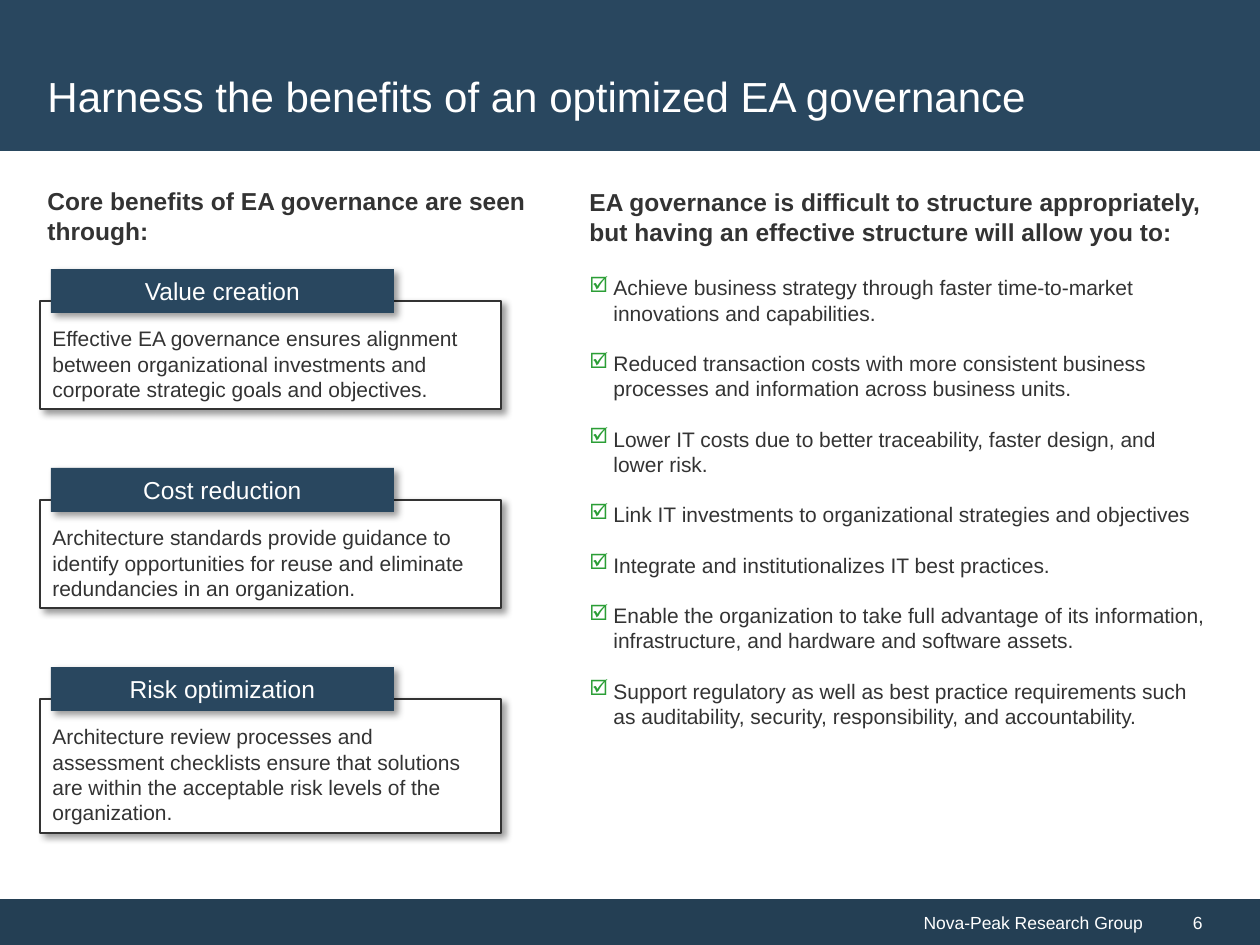
from lxml.etree import SubElement
from pptx import Presentation
from pptx.dml.color import RGBColor
from pptx.enum.shapes import MSO_SHAPE
from pptx.enum.text import MSO_ANCHOR, MSO_AUTO_SIZE, PP_ALIGN
from pptx.oxml import parse_xml
from pptx.oxml.ns import nsdecls, qn
from pptx.util import Emu, Pt

PX_PER_INCH = 126
NAVY = RGBColor(0x29, 0x47, 0x5F)
FOOTER_NAVY = RGBColor(0x24, 0x3F, 0x54)
CHARCOAL = RGBColor(0x33, 0x33, 0x33)
GREEN = RGBColor(0x2B, 0x9E, 0x36)
WHITE = RGBColor(0xFF, 0xFF, 0xFF)

BENEFITS = [
    ("Value creation", 108,
     "Effective EA governance ensures alignment between organizational "
     "investments and corporate strategic goals and objectives."),
    ("Cost reduction", 108,
     "Architecture standards provide guidance to identify opportunities for "
     "reuse and eliminate redundancies in an organization."),
    ("Risk optimization", 134,
     "Architecture review processes and assessment checklists ensure that "
     "solutions are within the acceptable risk levels of the organization."),
]
OUTCOMES = [
    "Achieve business strategy through faster time-to-market innovations and capabilities.",
    "Reduced transaction costs with more consistent business processes and "
    "information across business units.",
    "Lower IT costs due to better traceability, faster design, and lower risk.",
    "Link IT investments to organizational strategies and objectives",
    "Integrate and institutionalizes IT best practices.",
    "Enable the organization to take full advantage of its information, "
    "infrastructure, and hardware and software assets.",
    "Support regulatory as well as best practice requirements such as "
    "auditability, security, responsibility, and accountability.",
]


def px(length):
    return Emu(round(length * 914400 / PX_PER_INCH))


class SlideBuilder:
    """Holds the font and the current slide; each method adds one kind of element."""

    def __init__(self, slide, font_name):
        self.slide = slide
        self.font_name = font_name

    def style(self, paragraph, size, color, bold=False):
        font = paragraph.font
        font.name, font.size, font.bold = self.font_name, Pt(size), bold
        font.color.rgb = color

    def text(self, shape, text, size, color, bold=False, align=PP_ALIGN.LEFT,
             anchor=MSO_ANCHOR.MIDDLE):
        frame = shape.text_frame
        frame.word_wrap = True
        frame.vertical_anchor = anchor
        paragraph = frame.paragraphs[0]
        paragraph.text = text
        paragraph.alignment = align
        self.style(paragraph, size, color, bold)
        return frame

    def box(self, left, top, width, height, fill=None, preset=MSO_SHAPE.RECTANGLE, parent=None):
        shapes = (parent or self.slide).shapes
        shape = shapes.add_shape(preset, px(left), px(top), px(width), px(height))
        shape.shadow.inherit = False
        shape.line.fill.background()
        if fill is None:
            shape.fill.background()
        else:
            shape.fill.solid()
            shape.fill.fore_color.rgb = fill
        return shape

    def text_box(self, left, top, width, height):
        return self.slide.shapes.add_textbox(px(left), px(top), px(width), px(height))

    def drop_shadow(self, shape):
        effects = shape._element.spPr.find(qn("a:effectLst"))
        effects.append(parse_xml(
            f'<a:outerShdw {nsdecls("a")} blurRad="{Pt(4)}" dist="{Pt(3)}" dir="2700000" '
            'algn="tl" rotWithShape="0"><a:srgbClr val="000000"><a:alpha val="40000"/>'
            '</a:srgbClr></a:outerShdw>'))

    def card(self, top, label, body_height, body_text):
        """A label tab overlapping the top edge of an outlined text box."""
        group = self.slide.shapes.add_group_shape()
        body = self.box(40, top + 32, 461, body_height, WHITE, parent=group)
        body.line.color.rgb = CHARCOAL
        body.line.width = Pt(0.75)
        frame = self.text(body, body_text, 12, CHARCOAL, anchor=MSO_ANCHOR.TOP)
        frame.margin_top = px(25)
        frame.auto_size = MSO_AUTO_SIZE.SHAPE_TO_FIT_TEXT
        tab = self.box(51, top, 343, 44, NAVY, parent=group)
        self.text(tab, label, 14, WHITE, align=PP_ALIGN.CENTER)
        for shape in (body, tab):
            self.drop_shadow(shape)

    def check_item(self, frame, text, space_before):
        paragraph = frame.add_paragraph()
        paragraph.text = text
        paragraph.space_before = Pt(space_before)
        self.style(paragraph, 12, CHARCOAL)
        properties = paragraph._p.get_or_add_pPr()
        properties.set("marL", str(px(24)))
        properties.set("indent", str(px(-24)))
        color = parse_xml(f'<a:buClr {nsdecls("a")}><a:srgbClr val="{GREEN}"/></a:buClr>')
        properties.find(qn("a:defRPr")).addprevious(color)
        bullet = SubElement(properties, qn("a:buChar"), char="☑")
        color.addnext(bullet)


def main():
    presentation = Presentation()
    presentation.slide_width, presentation.slide_height = px(1260), px(945)
    slide = presentation.slides.add_slide(presentation.slide_layouts[6])
    builder = SlideBuilder(slide, "Arial")

    footer = builder.box(0, 899, 1155, 46, FOOTER_NAVY)
    builder.text(footer, "Nova-Peak Research Group", 10, WHITE, align=PP_ALIGN.RIGHT)
    page_number = builder.box(1155, 899, 105, 46, FOOTER_NAVY)
    builder.text(page_number, "6", 10, WHITE).margin_left = px(38)

    builder.box(0, 0, 1260, 151, NAVY)
    title = builder.text_box(35, 35, 1188, 121)
    builder.text(title, "Harness the benefits of an optimized EA governance", 24, WHITE)

    heading = builder.box(35, 180, 509, 67, preset=MSO_SHAPE.PENTAGON)
    heading.adjustments[0] = 0
    builder.text(heading, "Core benefits of EA governance are seen through:", 14, CHARCOAL,
                 bold=True, anchor=MSO_ANCHOR.TOP)

    checklist = builder.text_box(577, 181, 646, 585)
    frame = builder.text(
        checklist, "EA governance is difficult to structure appropriately, but having an "
        "effective structure will allow you to:", 14, CHARCOAL, bold=True, anchor=MSO_ANCHOR.TOP)
    for index, outcome in enumerate(OUTCOMES):
        builder.check_item(frame, outcome, 14.4 if index else 16.5)

    for index, (label, body_height, body_text) in enumerate(BENEFITS):
        builder.card(269 + 199 * index, label, body_height, body_text)

    presentation.save("out.pptx")


if __name__ == "__main__":
    main()
